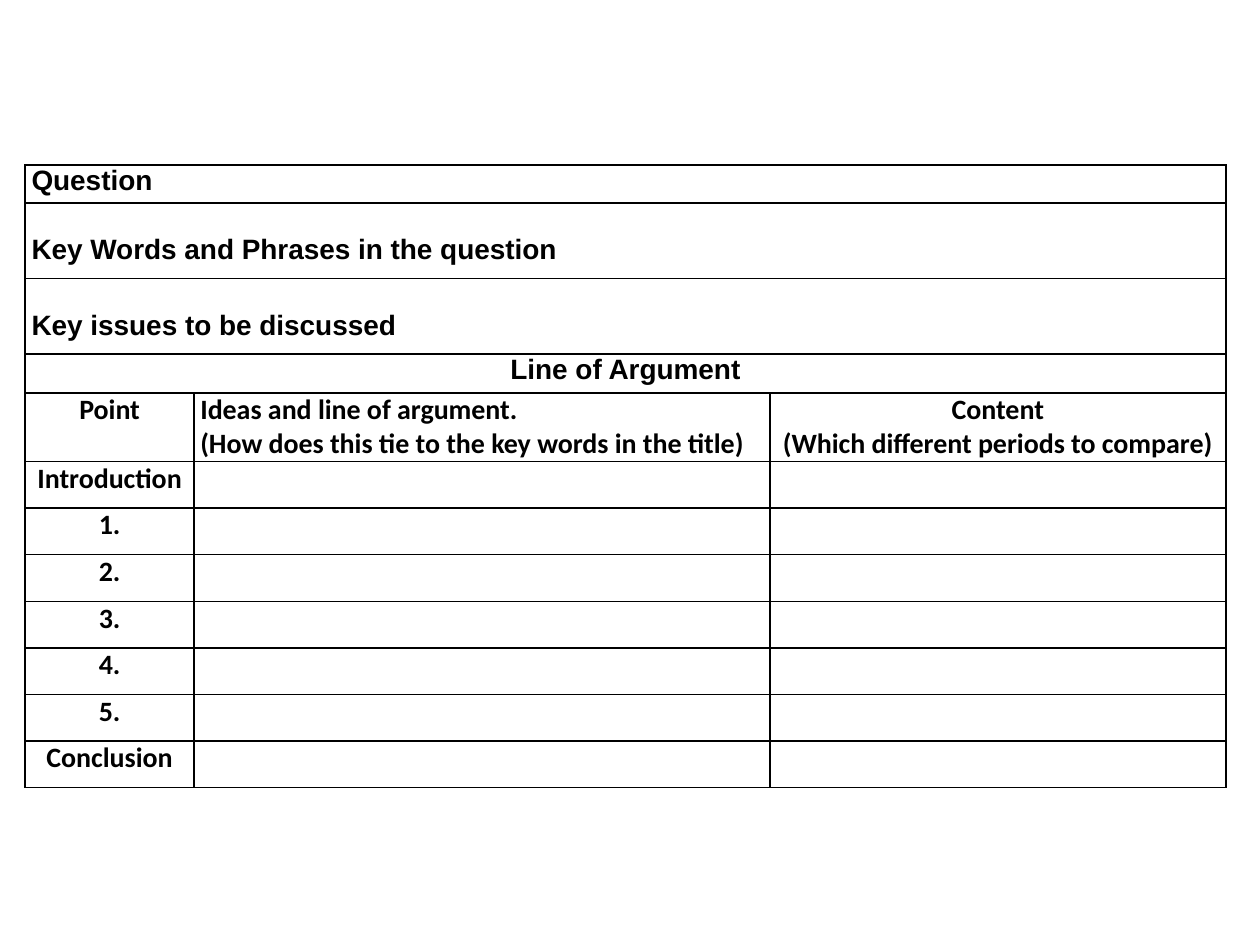
from pptx import Presentation
from pptx.dml.color import RGBColor
from pptx.enum.text import PP_ALIGN
from pptx.oxml import parse_xml
from pptx.oxml.ns import nsdecls
from pptx.util import Inches, Pt

INK = "000000"
# text, row height, space above the text, alignment
BANNERS = [
    ("Question", 0.3, 0, PP_ALIGN.LEFT),
    ("Key Words and Phrases in the question", 0.6, 0.25, PP_ALIGN.LEFT),
    ("Key issues to be discussed", 0.6, 0.25, PP_ALIGN.LEFT),
    ("Line of Argument", 0.31, 0, PP_ALIGN.CENTER),
]
HEADINGS = [
    ("Point", PP_ALIGN.CENTER),
    ("Ideas and line of argument.\n(How does this tie to the key words in the title)", PP_ALIGN.LEFT),
    ("Content\n(Which different periods to compare)", PP_ALIGN.CENTER),
]
POINTS = ["Introduction", "1.", "2.", "3.", "4.", "5.", "Conclusion"]
COL_WIDTHS = [1.34, 4.57, 3.62]
HEADING_HEIGHT, POINT_HEIGHT = 0.54, 0.37
LEFT, TOP = 0.2, 1.31


def rgb(color):
    return RGBColor.from_string(color)


def style_cell(cell):
    """Clear the fill, tighten the margins and draw thin borders."""
    cell.margin_left = cell.margin_right = Inches(0.05)
    cell.margin_top = cell.margin_bottom = 0
    tcPr = cell._tc.get_or_add_tcPr()
    for side in ("lnL", "lnR", "lnT", "lnB"):
        tcPr.append(parse_xml(
            f'<a:{side} {nsdecls("a")} w="{Pt(1)}"><a:solidFill>'
            f'<a:srgbClr val="{INK}"/></a:solidFill></a:{side}>'))
    cell.fill.background()


def write(cell, text, font, align):
    cell.text = text
    for p in cell.text_frame.paragraphs:
        p.alignment = align
        p.font.name = font
        p.font.size = Pt(16)
        p.font.bold = True
        p.font.color.rgb = rgb(INK)


prs = Presentation()
prs.slide_width, prs.slide_height = Inches(10), Inches(7.5)
s = prs.slides.add_slide(prs.slide_layouts[6])

heights = [b[1] for b in BANNERS] + [HEADING_HEIGHT] + [POINT_HEIGHT] * len(POINTS)
table = s.shapes.add_table(
    len(heights), len(COL_WIDTHS), Inches(LEFT), Inches(TOP),
    Inches(sum(COL_WIDTHS)), Inches(sum(heights))).table
table.first_row = table.horz_banding = False
for col, width in zip(table.columns, COL_WIDTHS):
    col.width = Inches(width)
for row, height in zip(table.rows, heights):
    row.height = Inches(height)
for cell in table.iter_cells():
    style_cell(cell)

for i, (text, _, space, align) in enumerate(BANNERS):
    cell = table.cell(i, 0)
    cell.merge(table.cell(i, len(COL_WIDTHS) - 1))
    cell.margin_top = Inches(space)
    write(cell, text, "Arial", align)

heading_row = len(BANNERS)
for j, (text, align) in enumerate(HEADINGS):
    write(table.cell(heading_row, j), text, "Calibri", align)
for i, text in enumerate(POINTS, heading_row + 1):
    write(table.cell(i, 0), text, "Calibri", PP_ALIGN.CENTER)

prs.save("out.pptx")
